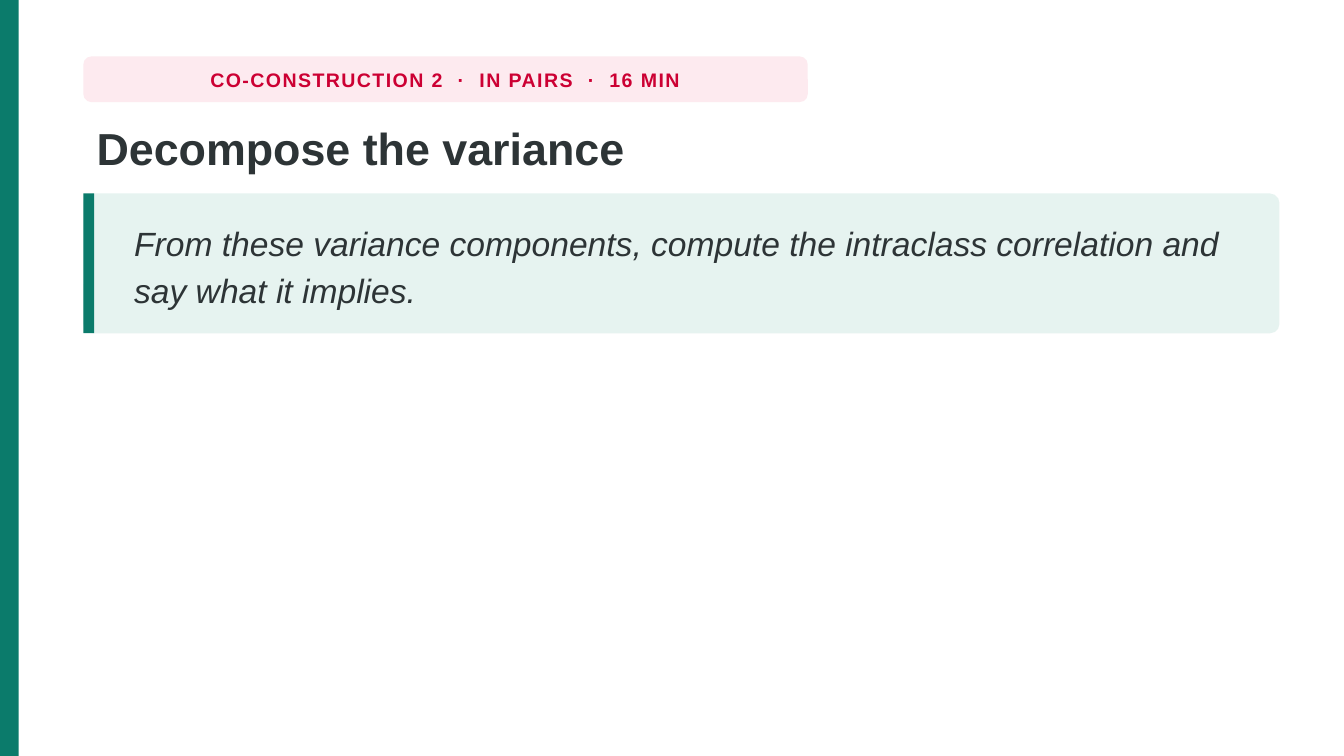
from dataclasses import dataclass
from typing import Optional

from pptx import Presentation
from pptx.dml.color import RGBColor
from pptx.enum.shapes import MSO_SHAPE
from pptx.enum.text import MSO_ANCHOR, PP_ALIGN
from pptx.util import Pt

GREEN = RGBColor(0x0B, 0x7B, 0x6B)
MINT = RGBColor(0xE6, 0xF3, 0xF0)
PINK = RGBColor(0xFD, 0xEA, 0xEF)
RED = RGBColor(0xCC, 0x00, 0x33)
INK = RGBColor(0x2D, 0x34, 0x36)

WIDTH, HEIGHT = 720, 405
LEFT, SPAN = 44.64, 640.8
ROUND = 4.32


@dataclass
class Box:
    x: float
    y: float
    w: float
    h: float


@dataclass
class Style:
    size: float
    color: RGBColor
    bold: bool = False
    slant: bool = False
    wrap: bool = True
    lead: Optional[float] = None
    track: Optional[float] = None
    align: PP_ALIGN = PP_ALIGN.LEFT
    anchor: MSO_ANCHOR = MSO_ANCHOR.MIDDLE


def add_panel(slide, box: Box, color: RGBColor, radius: float = 0) -> None:
    kind = MSO_SHAPE.ROUNDED_RECTANGLE if radius else MSO_SHAPE.RECTANGLE
    panel = slide.shapes.add_shape(kind, Pt(box.x), Pt(box.y), Pt(box.w), Pt(box.h))
    if radius:
        panel.adjustments[0] = radius / min(box.w, box.h)
    panel.shadow.inherit = False
    panel.fill.solid()
    panel.fill.fore_color.rgb = color
    panel.line.fill.background()


def add_label(slide, box: Box, text: str, style: Style) -> None:
    label = slide.shapes.add_textbox(Pt(box.x), Pt(box.y), Pt(box.w), Pt(box.h))
    frame = label.text_frame
    frame.word_wrap = style.wrap
    frame.vertical_anchor = style.anchor
    frame.text = text
    para = frame.paragraphs[0]
    para.alignment = style.align
    if style.lead:
        para.line_spacing = style.lead
    for run in para.runs:
        font = run.font
        font.name = "Arial"
        font.size = Pt(style.size)
        font.bold = style.bold
        font.italic = style.slant
        font.color.rgb = style.color
        if style.track:
            run._r.get_or_add_rPr().set("spc", str(round(style.track * 100)))


def main() -> None:
    deck = Presentation()
    deck.slide_width, deck.slide_height = Pt(WIDTH), Pt(HEIGHT)
    slide = deck.slides.add_slide(deck.slide_layouts[6])

    badge = Box(LEFT, 30.24, 388.08, 24.48)
    title = Box(LEFT, 60.48, SPAN, 40.32)
    card = Box(LEFT, 103.68, SPAN, 74.88)
    accent = Box(card.x, card.y, 5.76, card.h)
    prompt = Box(64.8, card.y + 3.6, 601.2, card.h - 7.2)

    add_panel(slide, Box(0, 0, 10.08, HEIGHT), GREEN)
    add_panel(slide, badge, PINK, ROUND)
    add_label(slide, badge, "CO-CONSTRUCTION 2  ·  IN PAIRS  ·  16 MIN",
              Style(10.5, RED, bold=True, wrap=False, track=0.8,
                    align=PP_ALIGN.CENTER))
    add_label(slide, title, "Decompose the variance",
              Style(24, INK, bold=True, lead=1.02, anchor=MSO_ANCHOR.TOP))
    add_panel(slide, card, MINT, 5.04)
    add_panel(slide, accent, GREEN)
    add_label(slide, prompt,
              "From these variance components, compute the intraclass "
              "correlation and say what it implies.",
              Style(18, INK, slant=True, lead=1.16))

    deck.save("out.pptx")


if __name__ == "__main__":
    main()
